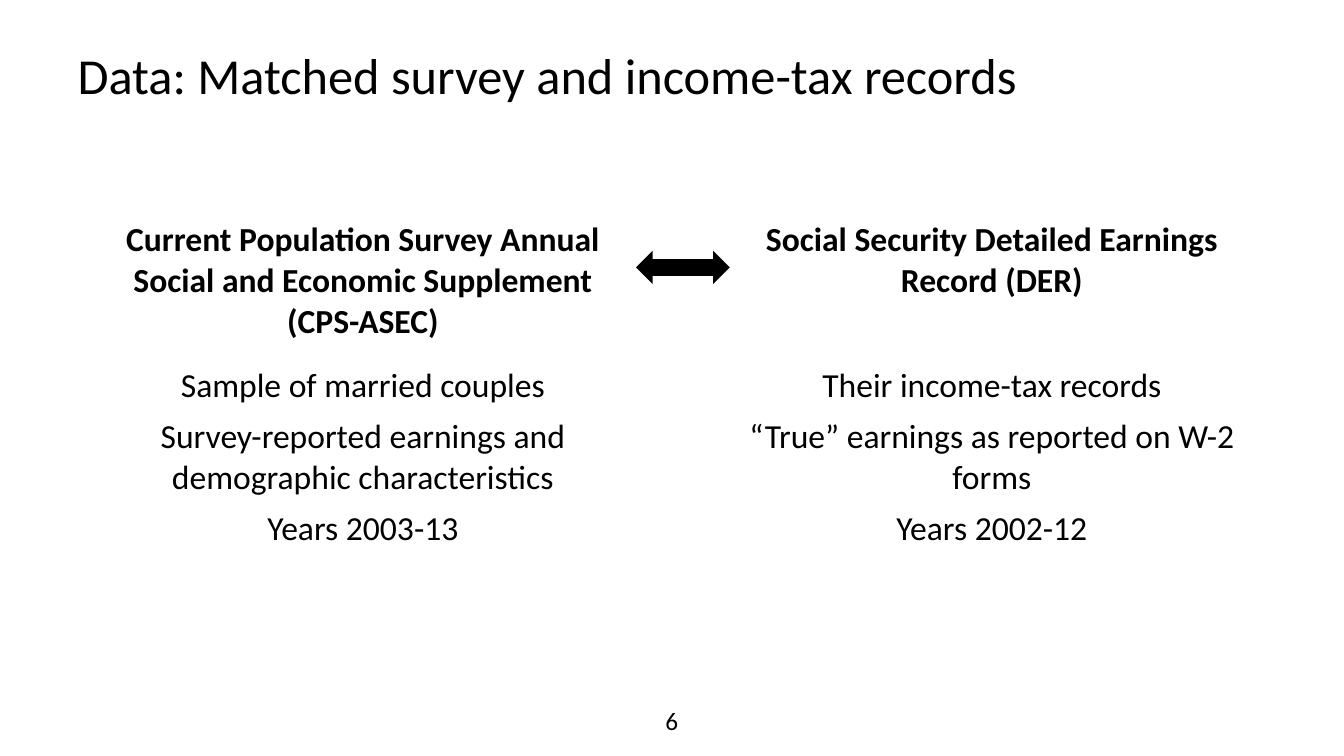
from dataclasses import dataclass

from pptx import Presentation
from pptx.dml.color import RGBColor
from pptx.enum.shapes import MSO_SHAPE
from pptx.enum.text import MSO_ANCHOR, PP_ALIGN
from pptx.slide import Slide
from pptx.text.text import TextFrame
from pptx.util import Cm, Pt

BLACK = RGBColor(0x00, 0x00, 0x00)
FONT = "Calibri"

COLUMN_WIDTHS = (13.21, 2.64, 13.21)
ROW_HEIGHTS = (3.68, 1.04, 1.04, 1.04)


@dataclass(frozen=True)
class DataSource:
    column: int
    heading: str
    facts: tuple[str, ...]


SOURCES = (
    DataSource(
        0,
        "Current Population Survey Annual Social and Economic Supplement (CPS-ASEC)",
        (
            "Sample of married couples",
            "Survey-reported earnings and demographic characteristics",
            "Years 2003-13",
        ),
    ),
    DataSource(
        2,
        "Social Security Detailed Earnings Record (DER)",
        (
            "Their income-tax records",
            "“True” earnings as reported on W-2 forms",
            "Years 2002-12",
        ),
    ),
)


def write(frame: TextFrame, text: str, *, size: float, bold: bool = False,
          align: PP_ALIGN = PP_ALIGN.CENTER) -> None:
    frame.word_wrap = True
    paragraph = frame.paragraphs[0]
    paragraph.alignment = align
    run = paragraph.add_run()
    run.text = text
    run.font.name = FONT
    run.font.size = Pt(size)
    run.font.bold = bold
    run.font.color.rgb = BLACK


def add_title(slide: Slide) -> None:
    title = slide.shapes.title
    title.left, title.top = Cm(1.7), Cm(0.76)
    title.width, title.height = Cm(30.48), Cm(2.21)
    title.text_frame.vertical_anchor = MSO_ANCHOR.MIDDLE
    write(title.text_frame, "Data: Matched survey and income-tax records",
          size=36, align=PP_ALIGN.LEFT)


def add_source_table(slide: Slide) -> None:
    table = slide.shapes.add_table(
        len(ROW_HEIGHTS), len(COLUMN_WIDTHS), Cm(2.54), Cm(5.41),
        Cm(sum(COLUMN_WIDTHS)), Cm(sum(ROW_HEIGHTS)),
    ).table
    table.first_row = table.horz_banding = False
    for column, width in zip(table.columns, COLUMN_WIDTHS):
        column.width = Cm(width)
    for row, height in zip(table.rows, ROW_HEIGHTS):
        row.height = Cm(height)
    for cell in table.iter_cells():
        cell.fill.background()
    for source in SOURCES:
        for row_index, text in enumerate((source.heading, *source.facts)):
            write(table.cell(row_index, source.column).text_frame, text,
                  size=24, bold=row_index == 0)


def add_match_arrow(slide: Slide) -> None:
    arrow = slide.shapes.add_shape(
        MSO_SHAPE.LEFT_RIGHT_ARROW, Cm(16.03), Cm(6.32), Cm(2.36), Cm(0.84))
    arrow.shadow.inherit = False
    arrow.fill.solid()
    arrow.fill.fore_color.rgb = BLACK
    arrow.line.fill.background()


def add_page_number(slide: Slide) -> None:
    page_number = slide.shapes.add_textbox(
        Cm(12.98), Cm(17.65), Cm(7.9), Cm(1.02))
    page_number.text_frame.vertical_anchor = MSO_ANCHOR.MIDDLE
    write(page_number.text_frame, "6", size=18)


def main() -> None:
    presentation = Presentation()
    presentation.slide_width, presentation.slide_height = Cm(33.87), Cm(19.05)
    slide = presentation.slides.add_slide(presentation.slide_layouts[5])
    add_title(slide)
    add_source_table(slide)
    add_match_arrow(slide)
    add_page_number(slide)
    presentation.save("out.pptx")


if __name__ == "__main__":
    main()
